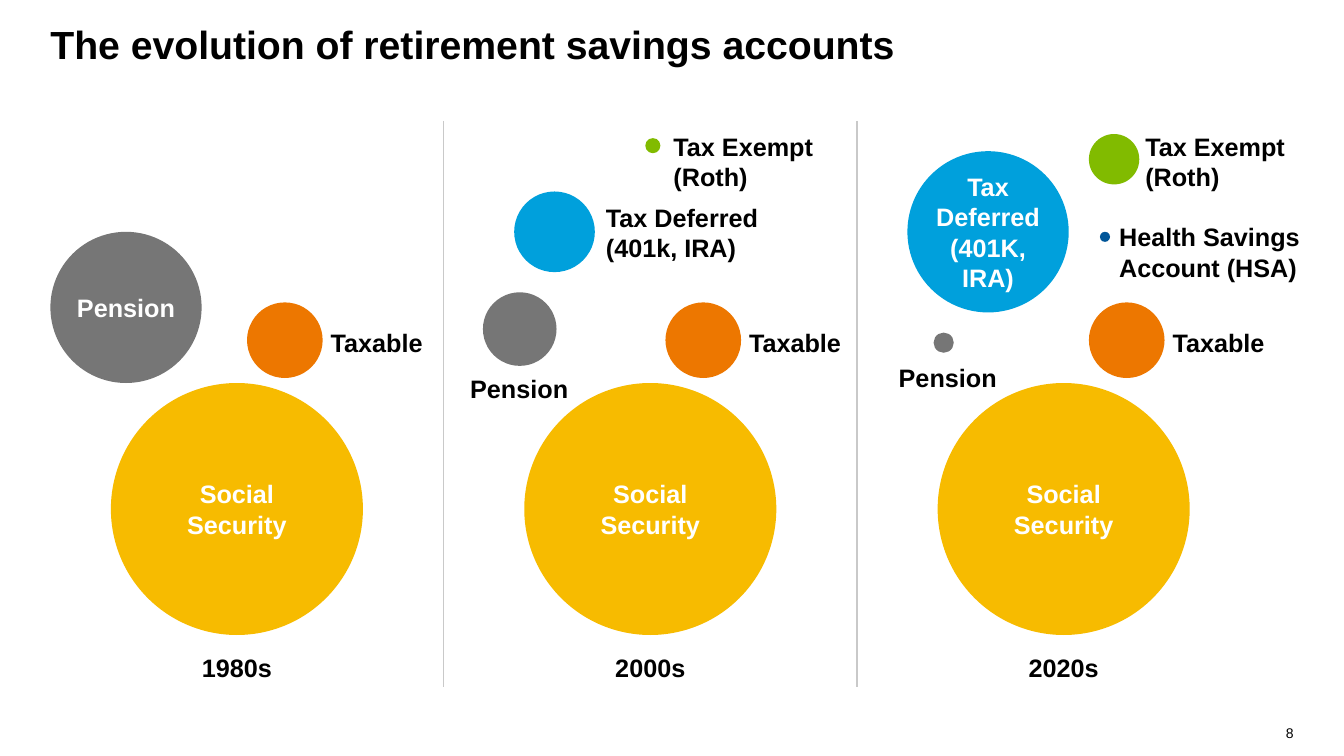
"""Build the slide on the evolution of retirement savings accounts."""
from lxml import etree
from pptx import Presentation
from pptx import util as u
from pptx.dml.color import RGBColor
from pptx.enum import shapes, text
from pptx.oxml.ns import qn

COLORS = {
    "ink": "000000", "white": "FFFFFF", "divider": "C9C9C9",
    "Social Security": "F7BB00", "Pension": "767676", "Taxable": "ED7700",
    "Tax Deferred": "00A0DC", "Tax Exempt": "81BB00", "HSA": "005598",
}
FONT = "Arial"
TITLE = "The evolution of retirement savings accounts"
PAGE_NUMBER = "8"

# Accounts: name, left, top, diameter, text inside
# Labels: text, left, top, width, alignment
ERAS = [
    {
        "decade": "1980s", "taxable_left": 2.45,
        "accounts": [("Pension", 0.5, 2.3, 1.5, "Pension")],
        "labels": [],
    },
    {
        "decade": "2000s", "taxable_left": 6.6,
        "accounts": [
            ("Tax Exempt", 6.4, 1.37, 0.15, ""),
            ("Tax Deferred", 5.1, 1.9, 0.8, ""),
            ("Pension", 4.79, 2.9, 0.73, ""),
        ],
        "labels": [
            ("Tax Exempt\n(Roth)", 6.68, 1.3, 2.14, "LEFT"),
            ("Tax Deferred\n(401k, IRA)", 6.01, 2.01, 1.6, "LEFT"),
            ("Pension", 4.6, 3.7, 1.1, "CENTER"),
        ],
    },
    {
        "decade": "2020s", "taxable_left": 10.8,
        "accounts": [
            ("Tax Exempt", 10.8, 1.33, 0.5, ""),
            ("HSA", 10.91, 2.3, 0.1, ""),
            ("Pension", 9.26, 3.3, 0.2, ""),
            ("Tax Deferred", 9, 1.5, 1.6, "Tax Deferred (401K, IRA)"),
        ],
        "labels": [
            ("Tax Exempt\n(Roth)", 11.36, 1.3, 1.67, "LEFT"),
            ("Health Savings\nAccount (HSA)", 11.1, 2.2, 2.2, "LEFT"),
            ("Pension", 8.85, 3.59, 1.1, "CENTER"),
        ],
    },
]

ERA_PITCH = 4.1
SOCIAL_LEFT, SOCIAL_TOP, SOCIAL_SIZE = 1.1, 3.8, 2.5
TAXABLE_TOP, TAXABLE_SIZE, TAXABLE_GAP = 3, 0.75, 0.08
DECADE_TOP, DECADE_WIDTH = 6.47, 1.74
LINE_HEIGHT = 0.3
DIVIDER_LEFT, DIVIDER_TOP, DIVIDER_BOTTOM = 4.4, 1.2, 6.82


def rgb(name):
    return RGBColor.from_string(COLORS[name])


def write(frame, words, size=18, color="ink", align="LEFT", anchor="TOP",
          bold=True, inset=0):
    frame.word_wrap = True
    frame.vertical_anchor = text.MSO_ANCHOR[anchor]
    frame.margin_left = frame.margin_right = u.Inches(inset)
    frame.margin_top = frame.margin_bottom = u.Inches(inset / 2)
    paragraph = frame.paragraphs[0]
    paragraph.alignment = text.PP_ALIGN[align]
    for number, line in enumerate(words.split("\n")):
        if number:
            paragraph.add_line_break()
        run = paragraph.add_run()
        run.text = line
        run.font.name, run.font.size, run.font.bold = FONT, u.Pt(size), bold
        run.font.color.rgb = rgb(color)


def add_label(parent, words, left, top, width, align="LEFT", height=None, **style):
    height = height or LINE_HEIGHT * len(words.split("\n"))
    label = parent.add_textbox(*map(u.Inches, (left, top, width, height)))
    write(label.text_frame, words, align=align, **style)


def add_account(parent, name, left, top, diameter, words="", inset=0):
    bubble = parent.add_shape(
        shapes.MSO_SHAPE.OVAL, *map(u.Inches, (left, top, diameter, diameter)))
    bubble.shadow.inherit = False
    bubble.fill.solid()
    bubble.fill.fore_color.rgb = rgb(name)
    bubble.line.fill.background()
    if words:
        write(bubble.text_frame, words, color="white", align="CENTER",
              anchor="MIDDLE", inset=inset)


def add_divider(parent, left):
    divider = parent.add_connector(
        shapes.MSO_CONNECTOR.STRAIGHT,
        *map(u.Inches, (left, DIVIDER_TOP, left, DIVIDER_BOTTOM)))
    divider.line.color.rgb = rgb("divider")
    divider.line.width = u.Pt(1)
    etree.SubElement(divider._element.spPr, qn("a:effectLst"))


def add_era(parent, index, era):
    social_left = SOCIAL_LEFT + index * ERA_PITCH
    add_account(parent, "Social Security", social_left, SOCIAL_TOP, SOCIAL_SIZE,
                "Social Security", inset=0.1)
    decade_left = social_left + (SOCIAL_SIZE - DECADE_WIDTH) / 2
    add_label(parent, era["decade"], decade_left, DECADE_TOP, DECADE_WIDTH, "CENTER")
    taxable_left = era["taxable_left"]
    add_account(parent, "Taxable", taxable_left, TAXABLE_TOP, TAXABLE_SIZE)
    add_label(parent, "Taxable", taxable_left + TAXABLE_SIZE + TAXABLE_GAP, 3.25, 1.07)
    for account in era["accounts"]:
        add_account(parent, *account)
    for label in era["labels"]:
        add_label(parent, *label)


def main():
    deck = Presentation()
    deck.slide_width, deck.slide_height = u.Inches(13.33), u.Inches(7.5)
    slide = deck.slides.add_slide(deck.slide_layouts[6])
    add_label(slide.shapes, TITLE, 0.5, 0.2, 9.5, height=0.85, size=28)
    add_label(slide.shapes, PAGE_NUMBER, 12.43, 7.15, 0.4, "RIGHT", height=0.2,
              size=10, bold=False, anchor="BOTTOM")
    for index, era in enumerate(ERAS):
        if index:
            add_divider(slide.shapes, DIVIDER_LEFT + (index - 1) * ERA_PITCH)
        add_era(slide.shapes.add_group_shape().shapes, index, era)
    deck.save("out.pptx")


if __name__ == "__main__":
    main()
